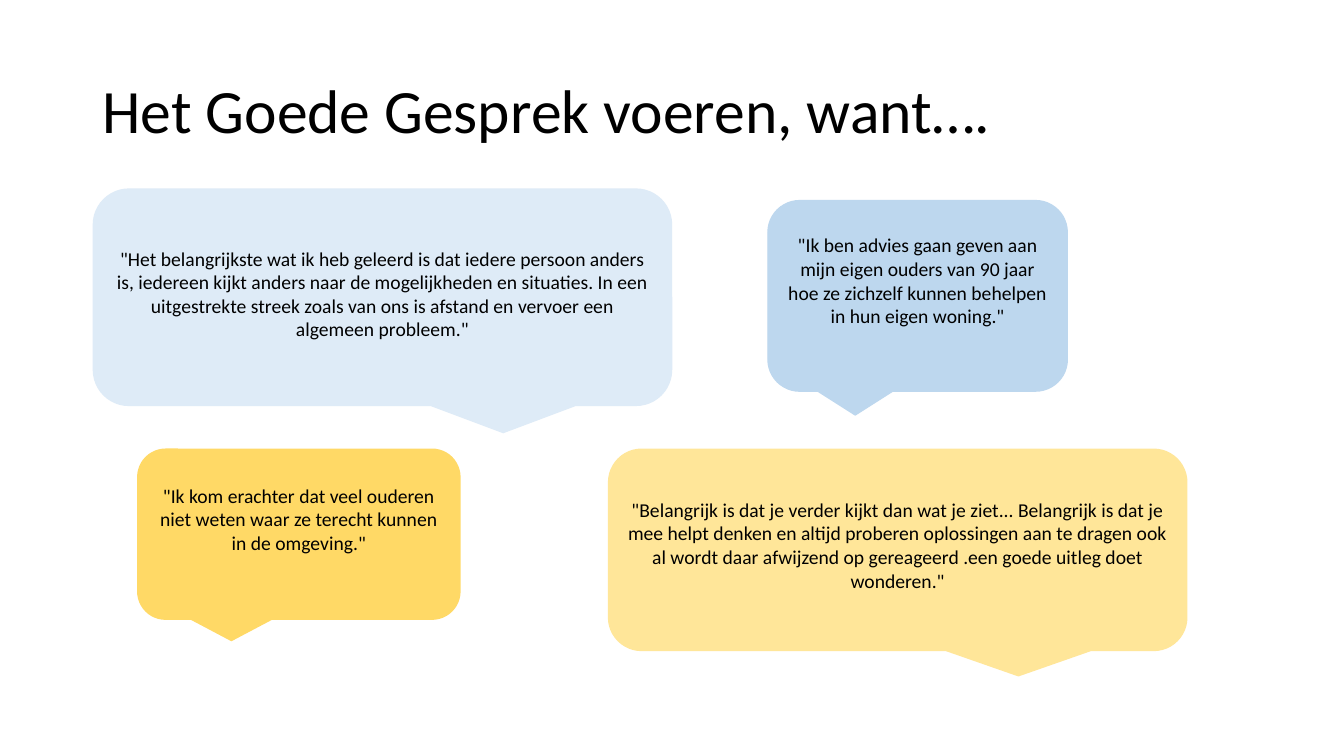
from dataclasses import dataclass

from pptx import Presentation
from pptx.dml.color import RGBColor as Rgb
from pptx.enum.shapes import MSO_SHAPE as Kind
from pptx.enum.text import MSO_ANCHOR as Anchor, MSO_AUTO_SIZE as Fit, PP_ALIGN as Align
from pptx.slide import Slide
from pptx.text.text import TextFrame
from pptx.util import Pt

COLORS = {
    "text": "000000",
    "pale": "DEEBF7",
    "blue": "BDD7EE",
    "cream": "FFE699",
    "gold": "FFD966",
}
TAIL = 0.20833


@dataclass(frozen=True)
class Quote:
    left: float
    top: float
    width: float
    height: float
    fill: str
    text: str
    lift: float = 22  # extra room below the text
    right: bool = False  # tail on the right half
    line: bool = False


QUOTES = [
    Quote(66.2, 134.6, 414, 155.5, "pale",
          '"Het belangrijkste wat ik heb geleerd is dat iedere persoon anders is, '
          "iedereen kijkt anders naar de mogelijkheden en situaties. In een "
          "uitgestrekte streek zoals van ons is afstand en vervoer een algemeen "
          'probleem."', lift=5, right=True),
    Quote(548.6, 143.3, 213.8, 136.1, "blue",
          '"Ik ben advies gaan geven aan mijn eigen ouders van 90 jaar hoe ze '
          'zichzelf kunnen behelpen in hun eigen woning."', line=True),
    Quote(434.2, 320.4, 414, 144.7, "cream",
          '"Belangrijk is dat je verder kijkt dan wat je ziet... Belangrijk is dat '
          "je mee helpt denken en altijd proberen oplossingen aan te dragen ook al "
          "wordt daar afwijzend op gereageerd .een goede uitleg doet "
          'wonderen."', lift=7, right=True),
    Quote(97.9, 320.4, 231.1, 122.4, "gold",
          '"Ik kom erachter dat veel ouderen niet weten waar ze terecht kunnen in '
          'de omgeving."'),
]


def color(name: str) -> Rgb:
    return Rgb.from_string(COLORS[name])


def write(frame: TextFrame, text: str, size: float, align: Align) -> None:
    frame.text = text
    frame.word_wrap = True
    frame.auto_size = Fit.NONE
    frame.vertical_anchor = Anchor.MIDDLE
    para = frame.paragraphs[0]
    para.alignment = align
    para.font.name = "Calibri"
    para.font.size = Pt(size)
    para.font.color.rgb = color("text")


def add_title(slide: Slide, text: str) -> None:
    title = slide.shapes.title
    title.left, title.top = Pt(66), Pt(28.8)
    title.width, title.height = Pt(828), Pt(104.4)
    write(title.text_frame, text, 44, Align.LEFT)
    title.text_frame.paragraphs[0].line_spacing = 0.9


def add_quote(slide: Slide, quote: Quote) -> None:
    shape = slide.shapes.add_shape(
        Kind.ROUNDED_RECTANGULAR_CALLOUT,
        Pt(quote.left), Pt(quote.top), Pt(quote.width), Pt(quote.height))
    shape.adjustments[0] = TAIL if quote.right else -TAIL
    shape.shadow.inherit = False
    shape.fill.solid()
    shape.fill.fore_color.rgb = color(quote.fill)
    if quote.line:
        shape.line.color.rgb = color(quote.fill)
        shape.line.width = Pt(1)
    else:
        shape.line.fill.background()
    write(shape.text_frame, quote.text, 14, Align.CENTER)
    shape.text_frame.margin_bottom = Pt(3.6 + quote.lift)


def main() -> None:
    deck = Presentation()
    deck.slide_width, deck.slide_height = Pt(960), Pt(540)
    slide = deck.slides.add_slide(deck.slide_layouts[5])
    add_title(slide, "Het Goede Gesprek voeren, want….")
    for quote in QUOTES:
        add_quote(slide, quote)
    deck.save("out.pptx")


if __name__ == "__main__":
    main()
